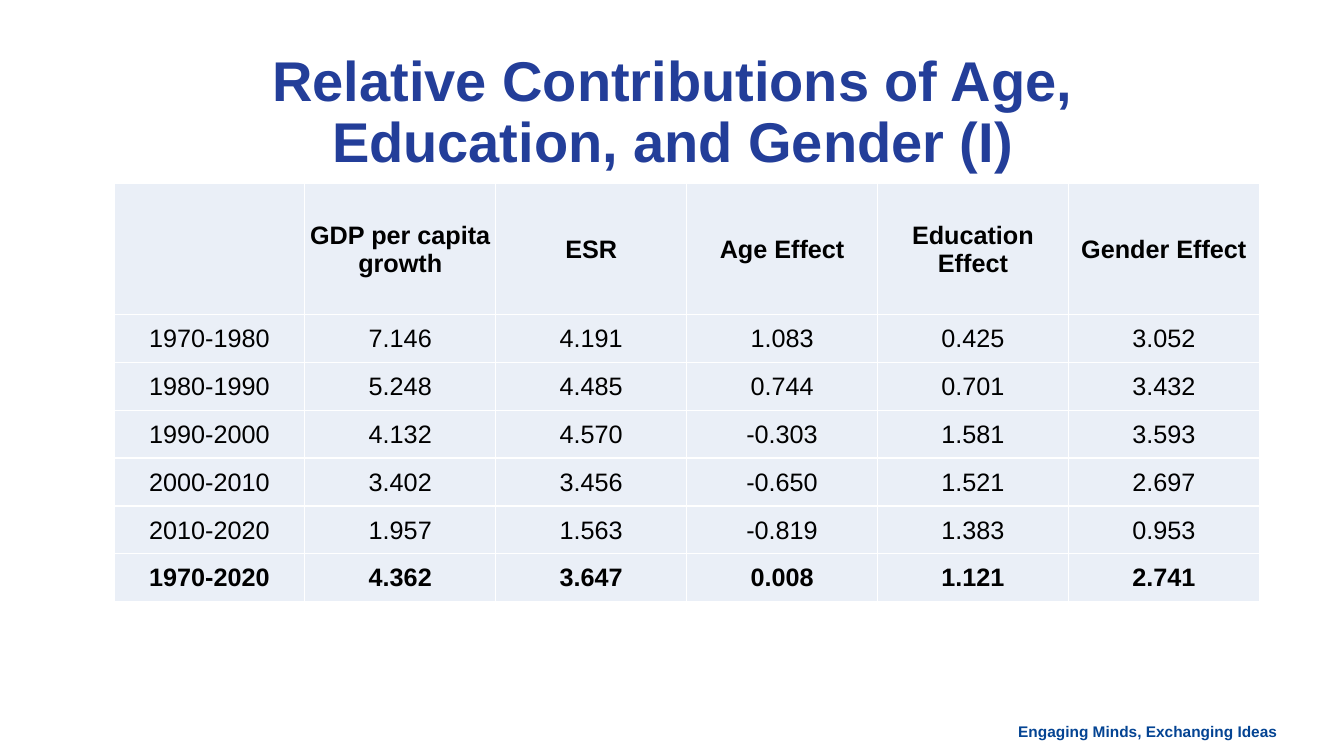
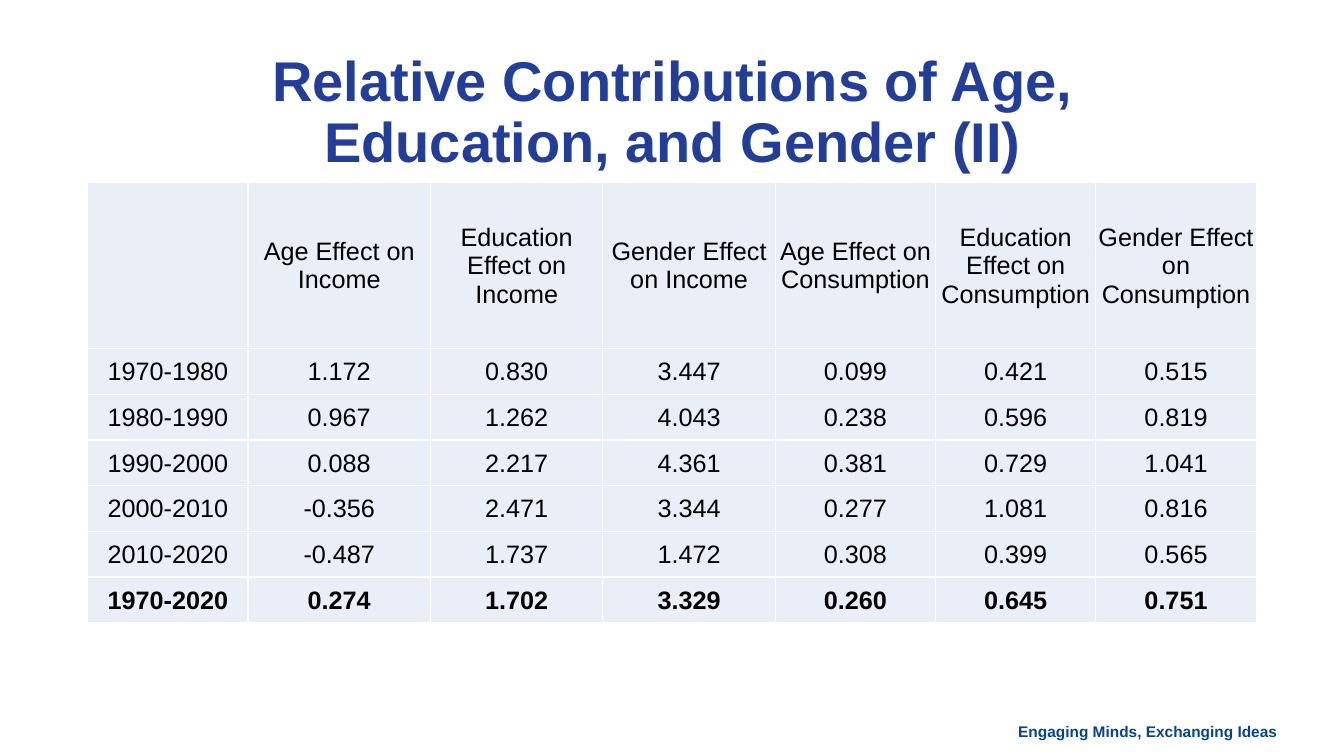
"""Build two slides of tables on age, education and gender contributions."""
from dataclasses import dataclass

from lxml import etree
from pptx import Presentation
from pptx import util as u
from pptx.dml.color import RGBColor
from pptx.enum import text
from pptx.oxml.ns import qn


@dataclass(frozen=True)
class Theme:
    """Colours, typeface and type sizes of the slides."""
    font: str = "Arial"
    title: str = "233E99"
    footer: str = "044493"
    ink: str = "000000"
    cell: str = "EAEFF7"
    rule: str = "FFFFFF"
    title_size: int = 40
    cell_size: int = 18
    footer_size: int = 11
    rule_width: int = 1


THEME = Theme()
BLANK_LAYOUT = 6
HEADLINE = "Relative Contributions of Age, Education, and Gender"
MOTTO = "Engaging Minds, Exchanging Ideas"
PERIODS = ["1970-1980", "1980-1990", "1990-2000",
           "2000-2010", "2010-2020", "1970-2020"]

GROWTH = {
    "title": f"{HEADLINE} (I)",
    "corner": (1.13, 1.82),
    "widths": [11.36 / 6] * 6,
    "heights": (1.3, 0.475),
    "bold_header": True,
    "headings": ["GDP per capita growth", "ESR", "Age Effect",
                 "Education Effect", "Gender Effect"],
    "values": [
        ["7.146", "4.191", "1.083", "0.425", "3.052"],
        ["5.248", "4.485", "0.744", "0.701", "3.432"],
        ["4.132", "4.570", "-0.303", "1.581", "3.593"],
        ["3.402", "3.456", "-0.650", "1.521", "2.697"],
        ["1.957", "1.563", "-0.819", "1.383", "0.953"],
        ["4.362", "3.647", "0.008", "1.121", "2.741"],
    ],
}
INCOME_CONSUMPTION = {
    "title": f"{HEADLINE} (II)",
    "corner": (0.87, 1.81),
    "widths": [1.59, 1.81, 1.71, 1.71, 1.59, 1.59, 1.59],
    "heights": (1.65, 0.453),
    "bold_header": False,
    "headings": [f"{factor} Effect on {outcome}"
                 for outcome in ("Income", "Consumption")
                 for factor in ("Age", "Education", "Gender")],
    "values": [
        ["1.172", "0.830", "3.447", "0.099", "0.421", "0.515"],
        ["0.967", "1.262", "4.043", "0.238", "0.596", "0.819"],
        ["0.088", "2.217", "4.361", "0.381", "0.729", "1.041"],
        ["-0.356", "2.471", "3.344", "0.277", "1.081", "0.816"],
        ["-0.487", "1.737", "1.472", "0.308", "0.399", "0.565"],
        ["0.274", "1.702", "3.329", "0.260", "0.645", "0.751"],
    ],
}


def apply(target, values):
    """Set each named attribute of the target."""
    for name, value in values.items():
        setattr(target, name, value)


def write(frame, words, size, color, bold, align):
    """Put one formatted paragraph in a text frame."""
    paragraph = frame.paragraphs[0]
    paragraph.alignment = align
    run = paragraph.add_run()
    run.text = words
    apply(run.font, {"name": THEME.font, "size": u.Pt(size), "bold": bold})
    run.font.color.rgb = RGBColor.from_string(color)
    return paragraph


def add_text(slide, place, words, size, color, align):
    """Add a wrapping text box with one bold paragraph."""
    frame = slide.shapes.add_textbox(*map(u.Inches, place)).text_frame
    frame.word_wrap = True
    return write(frame, words, size, color, True, align)


def add_title(slide, words):
    """Add the centred slide title."""
    paragraph = add_text(slide, (1.27, 0.48, 10.8, 0.68), words,
                         THEME.title_size, THEME.title, text.PP_ALIGN.CENTER)
    paragraph.line_spacing = 0.9


def add_footer(slide):
    """Add the motto at the lower right."""
    add_text(slide, (9.97, 7.11, 2.8, 0.29), MOTTO,
             THEME.footer_size, THEME.footer, text.PP_ALIGN.RIGHT)


def style_cell(cell):
    """Give a cell its borders, fill, margins and anchor."""
    properties = cell._tc.get_or_add_tcPr()
    for side in ("lnL", "lnR", "lnT", "lnB"):
        border = etree.SubElement(properties, qn(f"a:{side}"),
                                  w=str(u.Pt(THEME.rule_width)))
        paint = etree.SubElement(border, qn("a:solidFill"))
        etree.SubElement(paint, qn("a:srgbClr"), val=THEME.rule)
    cell.fill.solid()
    cell.fill.fore_color.rgb = RGBColor.from_string(THEME.cell)
    edge = u.Inches(0.01)
    apply(cell, {"margin_left": edge, "margin_right": edge,
                 "margin_top": edge, "margin_bottom": 0,
                 "vertical_anchor": text.MSO_ANCHOR.MIDDLE})


def add_results(slide, content):
    """Add the table of results with its header and closing total row."""
    header_height, row_height = content["heights"]
    heights = [header_height] + [row_height] * len(PERIODS)
    widths = content["widths"]
    rows = [["", *content["headings"]]]
    rows += [[period, *values]
             for period, values in zip(PERIODS, content["values"])]
    place = (*content["corner"], sum(widths), sum(heights))
    table = slide.shapes.add_table(
        len(rows), len(widths), *map(u.Inches, place)).table
    table.horz_banding = False
    for column, width in zip(table.columns, widths):
        column.width = u.Inches(width)
    for row, height in zip(table.rows, heights):
        row.height = u.Inches(height)
    bolds = [content["bold_header"]] + [False] * (len(PERIODS) - 1) + [True]
    for row, entries, bold in zip(table.rows, rows, bolds):
        for cell, words in zip(row.cells, entries):
            style_cell(cell)
            if words:
                write(cell.text_frame, words, THEME.cell_size, THEME.ink,
                      bold, text.PP_ALIGN.CENTER)


def main():
    """Build and save the presentation."""
    deck = Presentation()
    apply(deck, {"slide_width": u.Inches(13.33),
                 "slide_height": u.Inches(7.5)})
    for content in (GROWTH, INCOME_CONSUMPTION):
        slide = deck.slides.add_slide(deck.slide_layouts[BLANK_LAYOUT])
        add_footer(slide)
        add_title(slide, content["title"])
        add_results(slide, content)
    deck.save("out.pptx")


if __name__ == "__main__":
    main()
